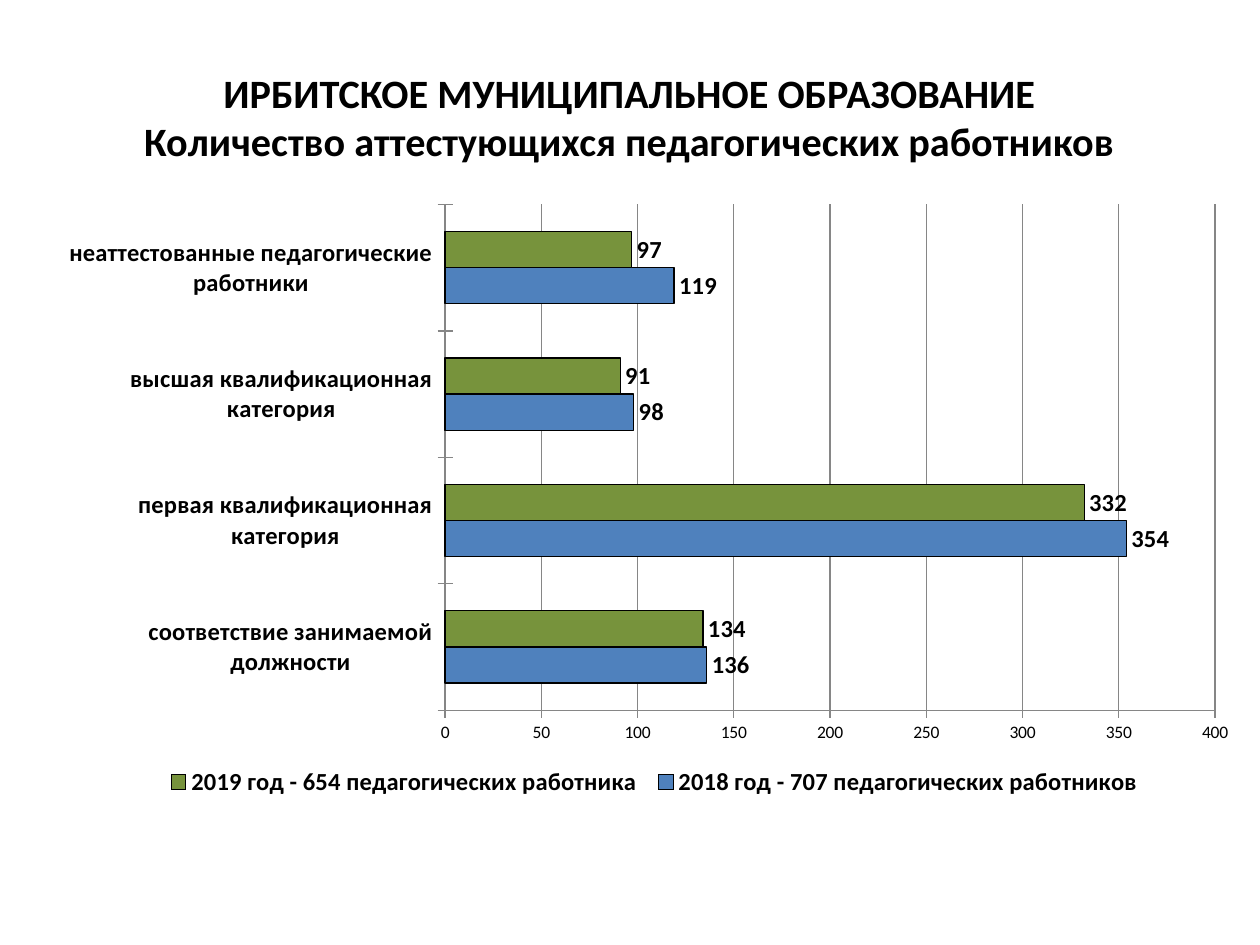
import pptx
import pptx.chart.data
import pptx.dml.color
import pptx.enum.chart
import pptx.enum.text
import pptx.oxml
import pptx.oxml.ns
import pptx.util

RGBColor = pptx.dml.color.RGBColor
BLACK = RGBColor(0x00, 0x00, 0x00)
GRAY = RGBColor(0x86, 0x86, 0x86)
BLUE = RGBColor(0x4F, 0x81, 0xBD)
GREEN = RGBColor(0x77, 0x93, 0x3C)
FONT = "Calibri"
SLIDE_WIDTH = pptx.util.Inches(10)
SLIDE_HEIGHT = pptx.util.Inches(7.5)

HEADING = ("ИРБИТСКОЕ МУНИЦИПАЛЬНОЕ ОБРАЗОВАНИЕ\v"
           "Количество аттестующихся педагогических работников")
CATEGORIES = [
    "соответствие занимаемой должности",
    "первая квалификационная категория",
    "высшая квалификационная категория",
    "неаттестованные педагогические работники",
]
YEARS = [
    ("2018 год - 707 педагогических работников", (136, 354, 98, 119), BLUE),
    ("2019 год - 654 педагогических работника", (134, 332, 91, 97), GREEN),
]


def share_box(left, top, width, height):
    """Turn shares of the slide's size into a position and size."""
    return (int(left * SLIDE_WIDTH), int(top * SLIDE_HEIGHT),
            int(width * SLIDE_WIDTH), int(height * SLIDE_HEIGHT))


def set_font(font, size, bold=False):
    font.name = FONT
    font.size = pptx.util.Pt(size)
    font.bold = bold
    font.color.rgb = BLACK


def set_layout(element, index, box, inner=False):
    """Fix a chart part at box, given as shares of the chart's size."""
    for old in element.findall(pptx.oxml.ns.qn("c:layout")):
        element.remove(old)
    target = '<c:layoutTarget val="inner"/>' if inner else ""
    modes = "".join(f'<c:{axis}Mode val="edge"/>' for axis in "xy")
    sizes = "".join(f'<c:{name} val="{share}"/>' for name, share in zip("xywh", box))
    element.insert(index, pptx.oxml.parse_xml(
        f'<c:layout {pptx.oxml.ns.nsdecls("c")}><c:manualLayout>'
        f'{target}{modes}{sizes}</c:manualLayout></c:layout>'))


def add_heading(slide):
    title = slide.shapes.title
    title.left, title.top, title.width, title.height = share_box(0.05, 0.04, 0.9, 1 / 6)
    frame = title.text_frame
    frame.text = HEADING
    frame.word_wrap = True
    frame.auto_size = pptx.enum.text.MSO_AUTO_SIZE.NONE
    frame.vertical_anchor = pptx.enum.text.MSO_ANCHOR.MIDDLE
    paragraph = frame.paragraphs[0]
    paragraph.alignment = pptx.enum.text.PP_ALIGN.CENTER
    set_font(paragraph.font, 23, True)


def format_axis(axis, size, bold):
    axis.major_tick_mark = pptx.enum.chart.XL_TICK_MARK.CROSS
    axis.minor_tick_mark = pptx.enum.chart.XL_TICK_MARK.NONE
    axis.format.line.color.rgb = GRAY
    set_font(axis.tick_labels.font, size, bold)


def format_series(series, color):
    series.format.fill.solid()
    series.format.fill.fore_color.rgb = color
    series.format.line.color.rgb = BLACK
    series.format.line.width = pptx.util.Pt(0.75)
    labels = series.data_labels
    labels.show_value = True
    labels.position = pptx.enum.chart.XL_LABEL_POSITION.OUTSIDE_END
    set_font(labels.font, 14, True)


def format_legend(chart):
    chart.has_legend = True
    legend = chart.legend
    legend.position = pptx.enum.chart.XL_LEGEND_POSITION.RIGHT
    legend.include_in_layout = False
    set_font(legend.font, 14, True)
    set_layout(legend._element, 1, (0.09, 0.8, 0.82, 0.07))


def add_staff_chart(slide):
    staff = pptx.chart.data.CategoryChartData()
    staff.categories = CATEGORIES
    for name, counts, _ in YEARS:
        staff.add_series(name, counts)
    chart = slide.shapes.add_chart(
        pptx.enum.chart.XL_CHART_TYPE.BAR_CLUSTERED,
        *share_box(0.039, 0.196, 0.961, 0.756), staff).chart
    chart.has_title = False
    set_font(chart.font, 10)

    plot = chart.plots[0]
    plot.gap_width = 150
    plot.overlap = 0
    plot.vary_by_categories = False
    for series, (_, _, color) in zip(plot.series, YEARS):
        format_series(series, color)

    format_axis(chart.category_axis, 14, True)
    counts_axis = chart.value_axis
    format_axis(counts_axis, 10, False)
    counts_axis.minimum_scale, counts_axis.maximum_scale = 0, 400
    counts_axis.major_unit = 50
    counts_axis.has_major_gridlines = True
    counts_axis.major_gridlines.format.line.color.rgb = GRAY

    format_legend(chart)
    plot_area = chart._chartSpace.chart.plotArea
    set_layout(plot_area, 0, (0.327, 0.027, 0.636, 0.708), inner=True)


def main():
    deck = pptx.Presentation()
    deck.slide_width, deck.slide_height = SLIDE_WIDTH, SLIDE_HEIGHT
    slide = deck.slides.add_slide(deck.slide_layouts.get_by_name("Title Only"))
    add_heading(slide)
    add_staff_chart(slide)
    deck.save("out.pptx")


if __name__ == "__main__":
    main()
